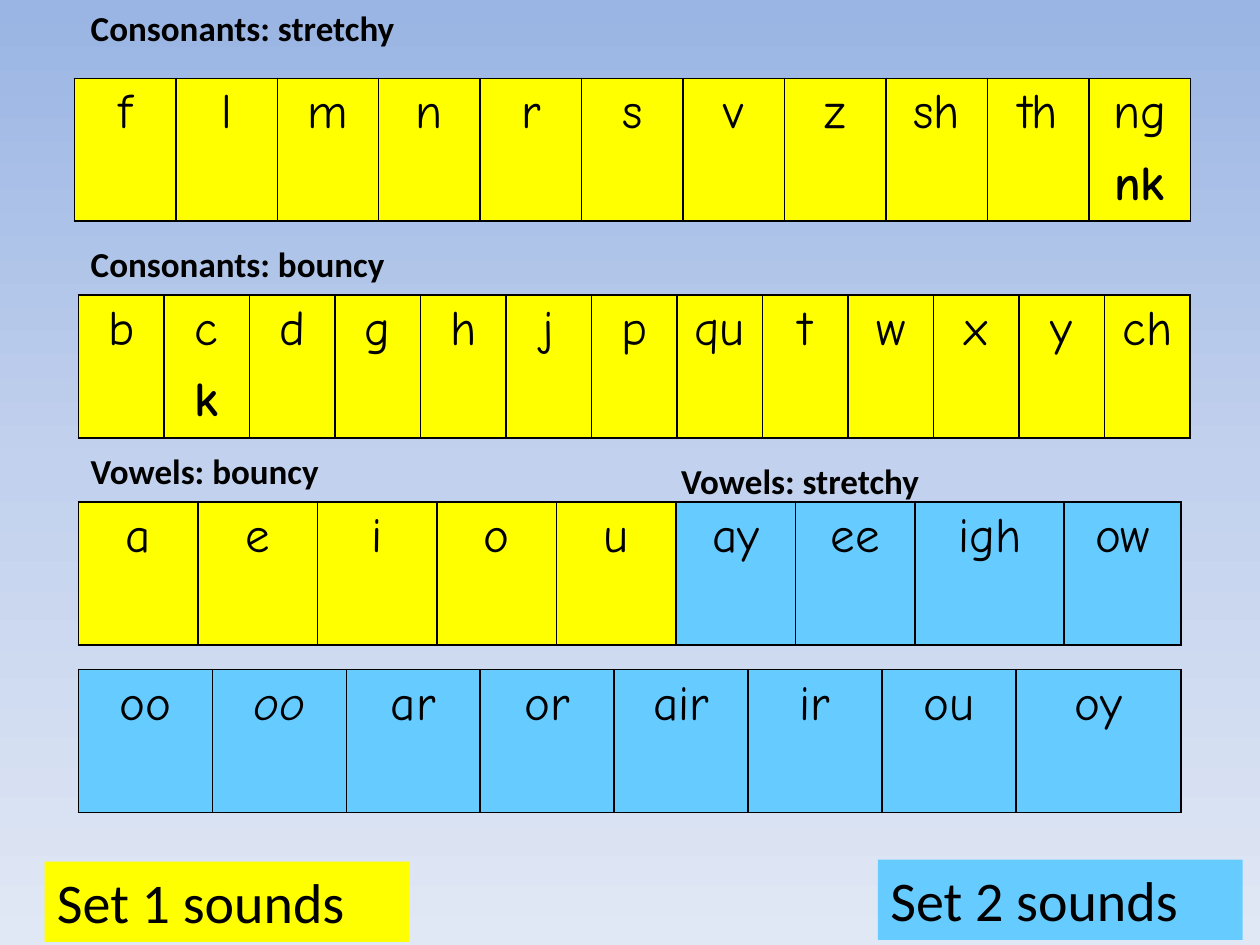
from copy import deepcopy

from lxml import etree
from pptx import Presentation
from pptx import util as u
from pptx.dml.color import RGBColor
from pptx.enum import text
from pptx.oxml import ns

BLACK = RGBColor(0x00, 0x00, 0x00)
SET_1 = RGBColor(0xFF, 0xFF, 0x00)
SET_2 = RGBColor(0x66, 0xCC, 0xFF)
SKY = (
    (0, RGBColor(0x9A, 0xB5, 0xE4)),
    (0.5, RGBColor(0xC2, 0xD1, 0xED)),
    (1, RGBColor(0xE1, 0xE8, 0xF5)),
)


class SoundChart:
    """Draws a phonics sound chart on one slide in a single style."""

    label_font = "Calibri"
    sound_font = "Comic Neue"
    row_height = u.Cm(1.44)

    def __init__(self, slide):
        self.slide = slide

    def background(self, stops):
        fill = self.slide.background.fill
        fill.gradient()
        fill.gradient_angle = 270
        stop_list = self.slide.element.find(".//" + ns.qn("a:gsLst"))
        stop_list.append(deepcopy(stop_list[-1]))
        for stop, (position, color) in zip(fill.gradient_stops, stops):
            stop.position = position
            stop.color.rgb = color

    def wording(self, frame, words, size, font, bold=False, italic=False):
        line = frame.paragraphs[0]
        line.text = words
        line.font.name = font
        line.font.size = u.Pt(size)
        line.font.color.rgb = BLACK
        line.font.bold = bold
        line.font.italic = italic
        return line

    def label(self, words, left, top, width, height, size=20, bold=True, color=None):
        box = self.slide.shapes.add_textbox(u.Cm(left), u.Cm(top), u.Cm(width), u.Cm(height))
        box.text_frame.word_wrap = True
        box.text_frame.auto_size = text.MSO_AUTO_SIZE.SHAPE_TO_FIT_TEXT
        if color is not None:
            box.fill.solid()
            box.fill.fore_color.rgb = color
        self.wording(box.text_frame, words, size, self.label_font, bold)

    def borders(self, cell, sides):
        properties = cell._tc.get_or_add_tcPr()
        for side in "LRTB":
            edge = etree.SubElement(properties, ns.qn(f"a:ln{side}"), w=str(u.Pt(1)))
            if side in sides:
                ink = etree.SubElement(edge, ns.qn("a:solidFill"))
                etree.SubElement(ink, ns.qn("a:srgbClr"), val=str(BLACK))
            else:
                etree.SubElement(edge, ns.qn("a:noFill"))

    def sounds(self, left, top, widths, spellings, set_1_count, extra=None, italic_at=None):
        count = len(spellings)
        grid = self.slide.shapes.add_table(
            2, count, u.Cm(left), u.Cm(top), u.Cm(sum(widths)), self.row_height * 2
        ).table
        grid.first_row = grid.horz_banding = False
        for column, width in zip(grid.columns, widths):
            column.width = u.Cm(width)
        extra = extra or {}
        lower = [extra.get(spelling, "") for spelling in spellings]
        for row, (sounds, sides) in enumerate(((spellings, "LRT"), (lower, "LRB"))):
            for index, sound in enumerate(sounds):
                cell = grid.cell(row, index)
                self.borders(cell, sides)
                cell.fill.solid()
                cell.fill.fore_color.rgb = SET_1 if index < set_1_count else SET_2
                if sound:
                    italic = row == 0 and index == italic_at
                    line = self.wording(cell.text_frame, sound, 28, self.sound_font, row == 1, italic)
                    line.alignment = text.PP_ALIGN.CENTER


def main():
    deck = Presentation()
    deck.slide_width, deck.slide_height = u.Cm(25.4), u.Cm(19.05)
    chart = SoundChart(deck.slides.add_slide(deck.slide_layouts[6]))
    chart.background(SKY)

    stretchy = "f l m n r s v z sh th ng".split()
    bouncy = "b c d g h j p qu t w x y ch".split()
    vowels = "a e i o u ay ee igh ow".split()
    long_vowels = "oo oo ar or air ir ou oy".split()
    chart.sounds(1.5, 1.58, [22.5 / 11] * 11, stretchy, 11, {"ng": "nk"})
    chart.sounds(1.58, 5.95, [22.42 / 13] * 13, bouncy, 13, {"c": "k"})
    chart.sounds(1.58, 10.12, [2.41] * 7 + [3, 2.36], vowels, 5)
    chart.sounds(1.58, 13.5, [2.7] * 7 + [3.33], long_vowels, 0, italic_at=1)

    chart.label("Set 1 sounds", 0.9, 17.37, 7.35, 1.62, 32, False, SET_1)
    chart.label("Set 2 sounds", 17.7, 17.33, 7.35, 1.62, 32, False, SET_2)
    chart.label("Consonants: stretchy", 1.58, 0, 8.33, 1.11)
    chart.label("Vowels: stretchy", 13.48, 9.13, 9.92, 1.11)
    chart.label("Consonants: bouncy", 1.58, 4.77, 8.33, 1.11)
    chart.label("Vowels: bouncy", 1.58, 8.93, 9.92, 1.11)
    deck.save("out.pptx")


if __name__ == "__main__":
    main()
